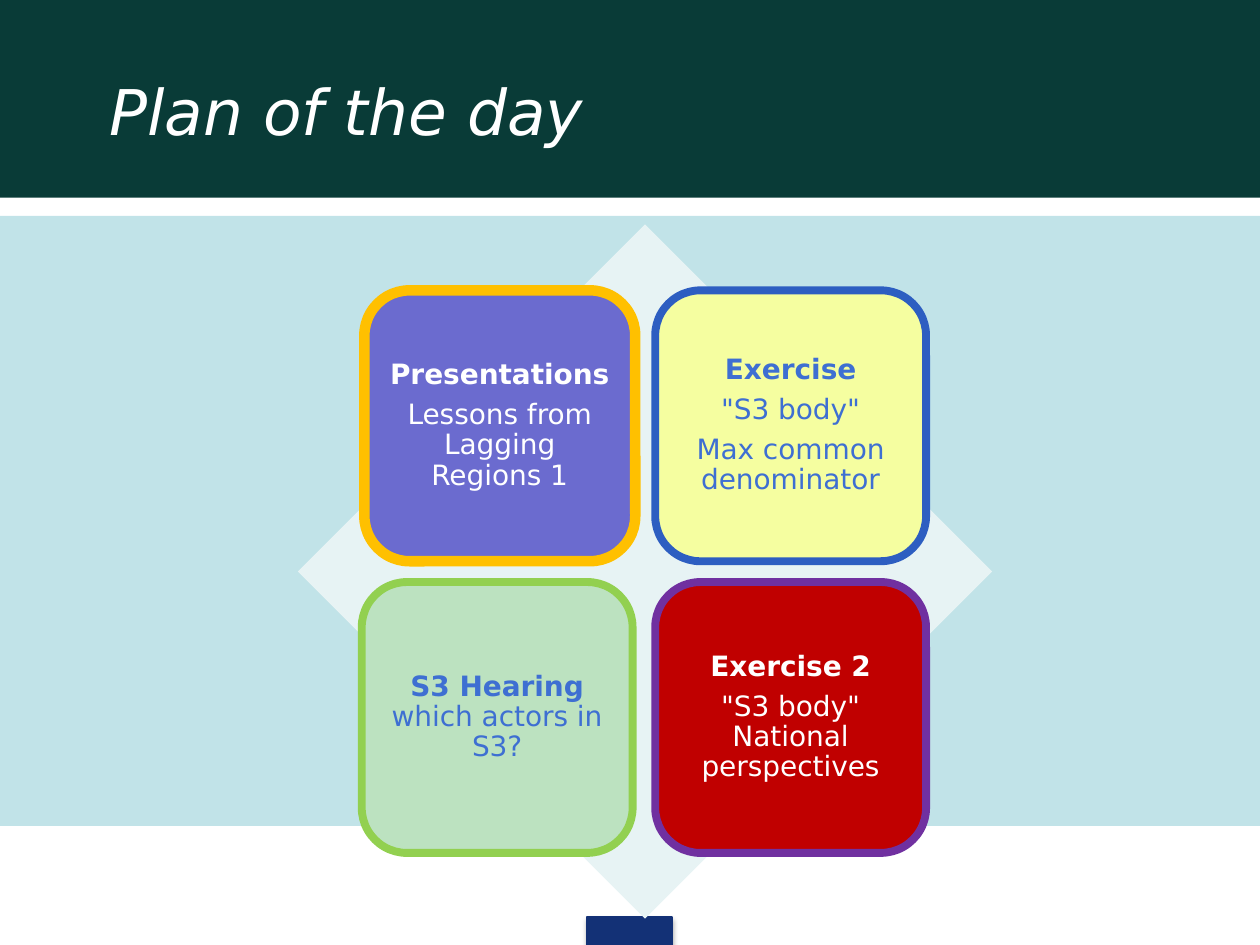
from lxml import etree
from pptx import Presentation
from pptx.dml.color import RGBColor
from pptx.enum.shapes import MSO_SHAPE
from pptx.enum.text import MSO_ANCHOR, PP_ALIGN
from pptx.oxml.ns import qn
from pptx.util import Pt

RECT, DIAMOND, ROUNDED = MSO_SHAPE.RECTANGLE, MSO_SHAPE.DIAMOND, MSO_SHAPE.ROUNDED_RECTANGLE
MIDDLE, CENTER = MSO_ANCHOR.MIDDLE, PP_ALIGN.CENTER

COLORS = {
    "header": "093B37", "band": "C1E3E8", "footer": "133176", "diamond": "E7F3F4",
    "white": "FFFFFF", "blue": "3E6FD2", "violet": "6B6BCF", "amber": "FFC000",
    "yellow": "F5FEA0", "royal": "2D5EC1", "mint": "BCE2C0", "green": "92D050",
    "red": "C00000", "purple": "7030A0", "shadow": "000000",
}


def rgb(name):
    return RGBColor.from_string(COLORS[name])


class SlideBuilder:
    font = "DejaVu Sans"
    title_size = Pt(36)
    tile_size = Pt(16)

    def __init__(self, slide):
        self.slide = slide

    def block(self, preset, left, top, width, height, fill, line=None, weight=0.75):
        shape = self.slide.shapes.add_shape(preset, Pt(left), Pt(top), Pt(width), Pt(height))
        shape.shadow.inherit = False
        shape.fill.solid()
        shape.fill.fore_color.rgb = rgb(fill)
        if line:
            shape.line.color.rgb = rgb(line)
            shape.line.width = Pt(weight)
        else:
            shape.line.fill.background()
        return shape

    def drop_shadow(self, shape):
        effects = shape._element.spPr.find(qn("a:effectLst"))
        shadow = etree.SubElement(effects, qn("a:outerShdw"), blurRad=str(Pt(3.1)),
                                  dist=str(Pt(1.8)), dir="5400000", rotWithShape="0")
        color = etree.SubElement(shadow, qn("a:srgbClr"), val=COLORS["shadow"])
        etree.SubElement(color, qn("a:alpha"), val="35000")

    def title(self, text, left, top, width, height):
        box = self.slide.shapes.add_textbox(Pt(left), Pt(top), Pt(width), Pt(height))
        frame = box.text_frame
        frame.word_wrap = True
        frame.margin_top = Pt(6)
        paragraph = frame.paragraphs[0]
        paragraph.text = text
        font = paragraph.font
        font.name, font.size, font.italic = self.font, self.title_size, True
        font.color.rgb = rgb("white")

    def tile(self, left, top, side, fill, line, weight, ink, paragraphs):
        """Each paragraph is a list of runs; the first run of the tile is bold."""
        shape = self.block(ROUNDED, left, top, side, side, fill, line, weight)
        frame = shape.text_frame
        frame.word_wrap = True
        frame.vertical_anchor = MIDDLE
        frame.margin_left = frame.margin_right = Pt(5)
        frame.margin_top = frame.margin_bottom = Pt(5)
        for i, runs in enumerate(paragraphs):
            paragraph = frame.add_paragraph() if i else frame.paragraphs[0]
            paragraph.alignment = CENTER
            paragraph.line_spacing = 0.9
            paragraph.space_after = Pt(5.6)
            font = paragraph.font
            font.name, font.size = self.font, self.tile_size
            font.color.rgb = rgb(ink)
            for j, text in enumerate(runs):
                run = paragraph.add_run()
                run.text = text
                run.font.bold = i == j == 0


def main():
    prs = Presentation()
    prs.slide_width, prs.slide_height = Pt(720), Pt(540)
    page = SlideBuilder(prs.slides.add_slide(prs.slide_layouts[6]))

    # Background bands and footer mark
    footer = page.block(RECT, 335.5, 524, 48.5, 16, "footer", "footer")
    page.drop_shadow(footer)
    page.block(RECT, 0, 123.4, 720, 348.6, "band")
    page.block(RECT, 0, 0, 720, 113, "header")
    page.title("Plan of the day", 55.5, 35.3, 643, 78.5)

    # Diamond behind the four tiles
    page.block(DIAMOND, 170.2, 128.2, 396.8, 396.8, "diamond")

    # Tiles in a two by two grid
    left, top, side, step_x, step_y = 206.7, 165.9, 154.8, 167.7, 166.7
    tiles = [
        ("violet", "amber", 6, "white",
         [["Presentations"], ["Lessons from Lagging Regions 1"]]),
        ("yellow", "royal", 4.5, "blue",
         [["Exercise"], ['"S3 body"'], ["Max common denominator"]]),
        ("mint", "green", 4.5, "blue",
         [["S3 Hearing ", "which actors in S3?"]]),
        ("red", "purple", 4.5, "white",
         [["Exercise 2"], ['"S3 body" National perspectives']]),
    ]
    for i, (fill, line, weight, ink, paragraphs) in enumerate(tiles):
        row, column = divmod(i, 2)
        # The thicker outline sits further in, so outer edges line up
        shift = weight - 4.5 if column == 0 else 0
        page.tile(left + column * step_x + shift, top + row * step_y, side,
                  fill, line, weight, ink, paragraphs)

    prs.save("out.pptx")


if __name__ == "__main__":
    main()
